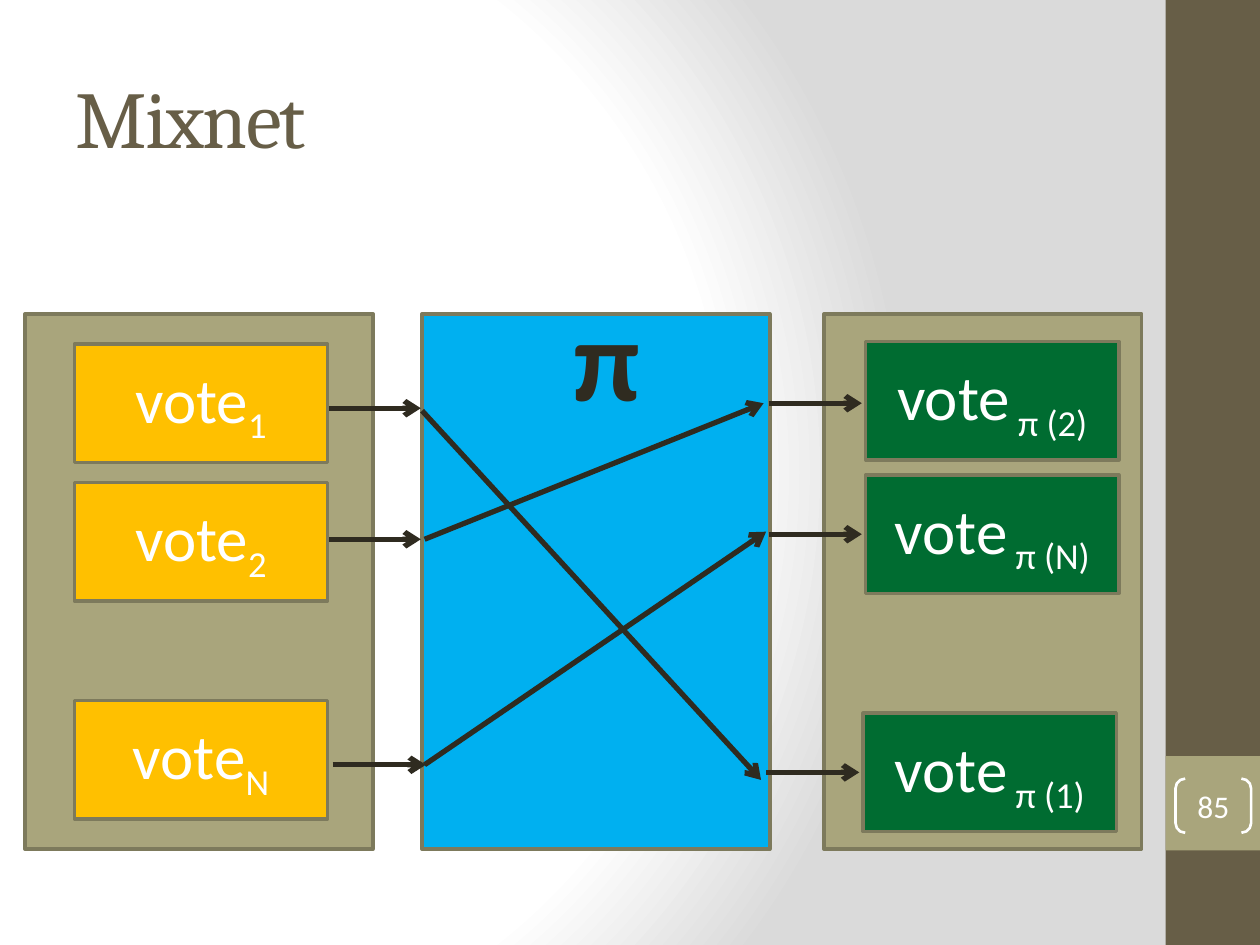
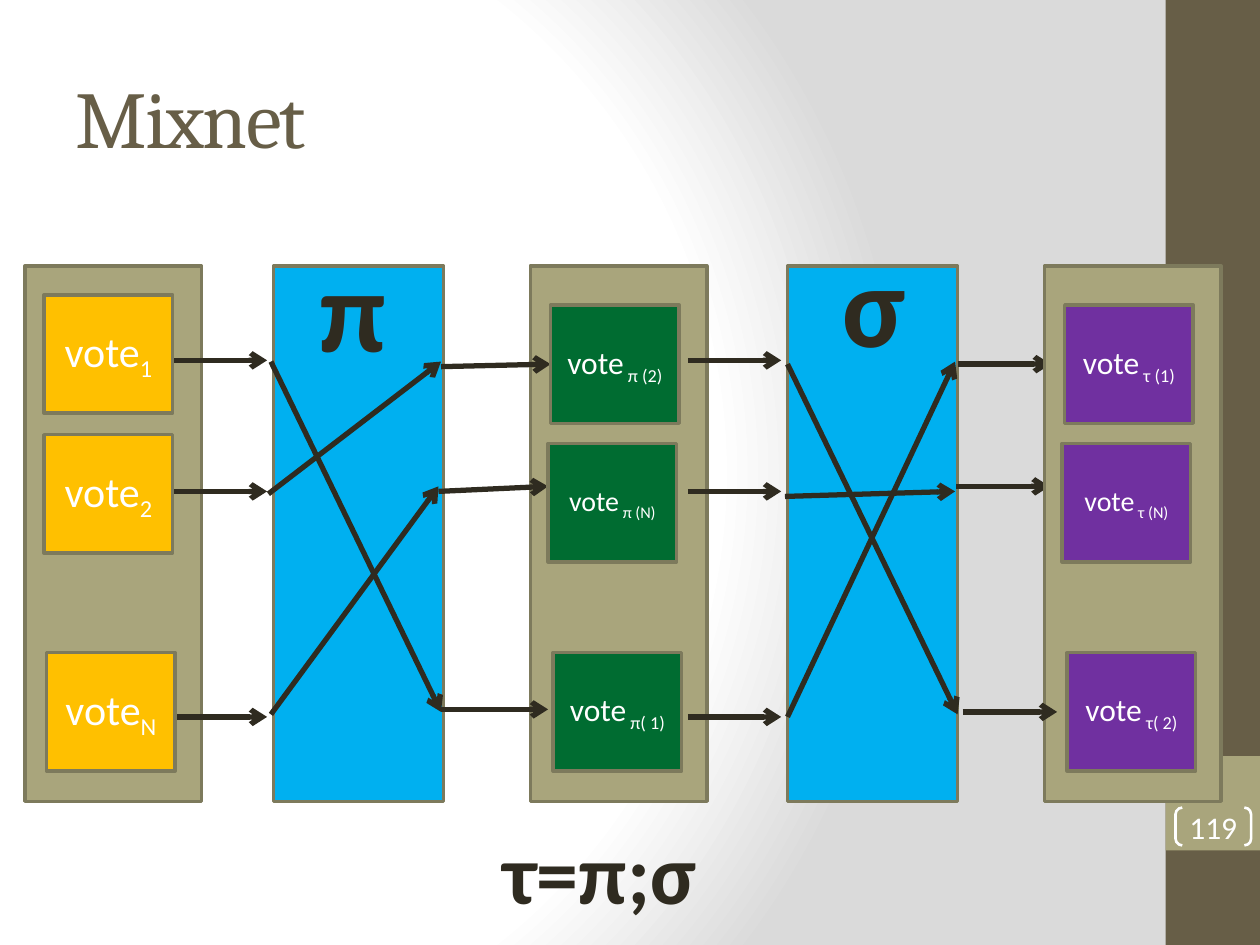
"""Build two slides that show how a mixnet shuffles votes."""
import dataclasses
import itertools

import pptx
import pptx.dml.color
import pptx.enum.shapes
import pptx.enum.text
import pptx.oxml
import pptx.oxml.ns
import pptx.util
from pptx.util import Inches


@dataclasses.dataclass(frozen=True)
class Theme:
    band: str = "675E47"
    panel: str = "A9A57C"
    outline: str = "7D7A5C"
    mixer: str = "00B0F0"
    cast: str = "FFC000"
    mixed: str = "006C31"
    remixed: str = "7030A0"
    ink: str = "2F2B20"
    light: str = "FFFFFF"
    shade: str = "DADADA"
    heading_font: str = "Cambria"
    body_font: str = "Calibri"
    title_size: int = 46
    symbol_size: int = 66
    formula_size: int = 48
    number_size: int = 18


THEME = Theme()
RGB = pptx.dml.color.RGBColor.from_string
ALIGN = pptx.enum.text.PP_ALIGN
MIDDLE = pptx.enum.text.MSO_ANCHOR.MIDDLE
SHAPE = pptx.enum.shapes.MSO_SHAPE


def write(frame, text, size, color=THEME.light, font=THEME.body_font, bold=False,
          align=ALIGN.CENTER, subscript="", spacing=None):
    paragraph = frame.paragraphs[0]
    paragraph.alignment = align
    for part, baseline in ((text, None), (subscript, "-25000")):
        if not part:
            continue
        run = paragraph.add_run()
        run.text = part
        run.font.size = pptx.util.Pt(size)
        run.font.name = font
        run.font.bold = bold
        run.font.color.rgb = RGB(color)
        properties = run.font._element
        if baseline:
            properties.set("baseline", baseline)
        if spacing:
            properties.set("spc", str(spacing))


def add_block(slide, left, top, width, height, fill=None, line=None, weight=2, kind=SHAPE.RECTANGLE):
    block = slide.shapes.add_shape(kind, Inches(left), Inches(top), Inches(width), Inches(height))
    block.shadow.inherit = False
    if fill:
        block.fill.solid()
        block.fill.fore_color.rgb = RGB(fill)
    else:
        block.fill.background()
    if line:
        block.line.color.rgb = RGB(line)
        block.line.width = pptx.util.Pt(weight)
    else:
        block.line.fill.background()
    block.text_frame.vertical_anchor = MIDDLE
    return block


PANEL_HEIGHT = 4.25
VOTE_HEIGHT = 0.94
STEP = 0.74

single_mix = {
    "number": "85", "number_top": 6.18, "number_height": 0.43, "panel_top": 2.49, "vote_width": 2.01,
    "panels": [(0.2, 2.76, THEME.panel), (3.35, 2.76, THEME.mixer), (6.54, 2.52, THEME.panel)],
    "votes": [
        (THEME.cast, [(0.59, 2.73, "1", 36), (0.59, 3.83, "2", 36), (0.59, 5.56, "N", 36)]),
        (THEME.mixed, [(6.87, 2.71, " π (2)", 36), (6.87, 3.77, " π (N)", 36),
                       (6.85, 5.66, " π (1)", 36)]),
    ],
    "covered_arrows": [],
    "arrows": [(x, y, x + STEP, y) for x, y in (
        (2.6, 3.24), (2.6, 4.28), (2.64, 6.07), (6.1, 3.2), (6.1, 4.24), (6.08, 6.13))] + [
        (3.35, 3.26, 6.04, 6.19), (3.37, 4.28, 6.06, 3.2), (3.37, 6.07, 6.08, 4.22)],
    "labels": [(4.45, 2.22, 0.71, 1.21, "π", THEME.symbol_size)],
}

double_mix = {
    "number": "119", "number_top": 6.41, "number_height": 0.3, "panel_top": 2.11, "vote_width": 1.02,
    "panels": [(0.2, 1.4, THEME.panel), (2.17, 1.35, THEME.mixer), (4.21, 1.4, THEME.panel),
               (6.25, 1.35, THEME.mixer), (8.29, 1.4, THEME.panel)],
    "votes": [
        (THEME.cast, [(0.35, 2.34, "1", 24), (0.35, 3.45, "2", 24), (0.37, 5.18, "N", 24)]),
        (THEME.mixed, [(4.37, 2.42, " π (2)", 18), (4.35, 3.52, " π (N)", 16),
                       (4.39, 5.18, " π( 1)", 18)]),
        (THEME.remixed, [(8.45, 2.42, " τ (1)", 18), (8.43, 3.52, " τ (N)", 16),
                         (8.47, 5.18, " τ( 2)", 18)]),
    ],
    "covered_arrows": [(7.6, 2.89, 8.34, 2.89), (7.59, 3.86, 8.33, 3.86)],
    "arrows": [(x, y, x + STEP, y) for x, y in itertools.product((1.38, 5.46), (2.86, 3.9, 5.69))] + [
        (2.15, 2.87, 3.5, 5.65), (2.13, 3.92, 3.5, 2.87), (2.15, 5.67, 3.48, 3.86),
        (3.5, 2.91, 4.37, 2.89), (3.48, 3.9, 4.35, 3.86), (3.5, 5.63, 4.35, 5.63),
        (6.25, 2.89, 7.6, 5.67), (6.23, 3.94, 7.58, 3.9), (6.25, 5.69, 7.58, 2.87),
        (7.64, 5.65, 8.39, 5.65)],
    "labels": [(2.44, 1.83, 0.71, 1.21, "π", THEME.symbol_size),
               (6.59, 1.79, 0.76, 1.21, "σ", THEME.symbol_size),
               (3.9, 6.46, 2.12, 0.91, "τ=π;σ", THEME.formula_size)],
}

deck = pptx.Presentation()
deck.slide_width, deck.slide_height = Inches(10), Inches(7.5)

master = deck.slide_master
master.background.fill.gradient()
plain_gradient = next(master.element.iter(pptx.oxml.ns.qn("a:gradFill")))
stops = "".join(f'<a:gs pos="{position}000"><a:srgbClr val="{color}"/></a:gs>' for position, color in (
    (0, THEME.light), (75, THEME.light), (100, THEME.shade)))
glow = pptx.oxml.parse_xml(
    f'<a:gradFill {pptx.oxml.ns.nsdecls("a")} rotWithShape="1"><a:gsLst>{stops}</a:gsLst>'
    '<a:path path="circle"><a:fillToRect l="20000" t="50000" r="100000" b="50000"/></a:path></a:gradFill>')
plain_gradient.getparent().replace(plain_gradient, glow)

for content in (single_mix, double_mix):
    slide = deck.slides.add_slide(deck.slide_layouts[5])
    add_block(slide, 9.25, 0, 0.75, 7.5, THEME.band)
    add_block(slide, 9.25, 6, 0.75, 0.75, THEME.panel)

    title = slide.shapes.title
    title.left, title.top, title.width, title.height = map(Inches, (0.5, 0.3, 8.33, 1.25))
    title.text_frame.vertical_anchor = MIDDLE
    write(title.text_frame, "Mixnet", THEME.title_size, color=THEME.band,
          font=THEME.heading_font, align=ALIGN.LEFT, spacing=-100)

    number = add_block(slide, 9.33, content["number_top"], 0.6, content["number_height"],
                       line=THEME.light, weight=1.5, kind=SHAPE.DOUBLE_BRACKET)
    number.adjustments[0] = 0.179
    frame = number.text_frame
    frame.margin_left = frame.margin_right = frame.margin_top = frame.margin_bottom = 0
    write(frame, content["number"], THEME.number_size)

    panels = [("panel", panel) for panel in content["panels"]]
    covered = [("arrow", ends) for ends in content["covered_arrows"]]
    arrows = [("arrow", ends) for ends in content["arrows"]]
    for part, values in panels[:-1] + covered + panels[-1:] + arrows:
        if part == "panel":
            left, width, fill = values
            add_block(slide, left, content["panel_top"], width, PANEL_HEIGHT, fill, THEME.outline)
            continue
        arrow = slide.shapes.add_connector(
            pptx.enum.shapes.MSO_CONNECTOR.STRAIGHT, *map(Inches, values))
        arrow.line.color.rgb = RGB(THEME.ink)
        arrow.line.width = pptx.util.Pt(3)
        outline = arrow.line._get_or_add_ln()
        outline.append(pptx.oxml.parse_xml(
            f'<a:tailEnd {pptx.oxml.ns.nsdecls("a")} type="arrow"/>'))
        outline.addnext(pptx.oxml.parse_xml(f'<a:effectLst {pptx.oxml.ns.nsdecls("a")}/>'))

    for fill, votes in content["votes"]:
        for left, top, index, size in votes:
            vote = add_block(slide, left, top, content["vote_width"], VOTE_HEIGHT, fill, THEME.outline)
            write(vote.text_frame, "vote", size, subscript=index)

    for left, top, width, height, symbol, size in content["labels"]:
        label = slide.shapes.add_textbox(Inches(left), Inches(top), Inches(width), Inches(height))
        label.text_frame.word_wrap = size == THEME.formula_size
        label.text_frame.auto_size = pptx.enum.text.MSO_AUTO_SIZE.SHAPE_TO_FIT_TEXT
        write(label.text_frame, symbol, size, color=THEME.ink, bold=True, align=ALIGN.LEFT)

deck.save("out.pptx")
